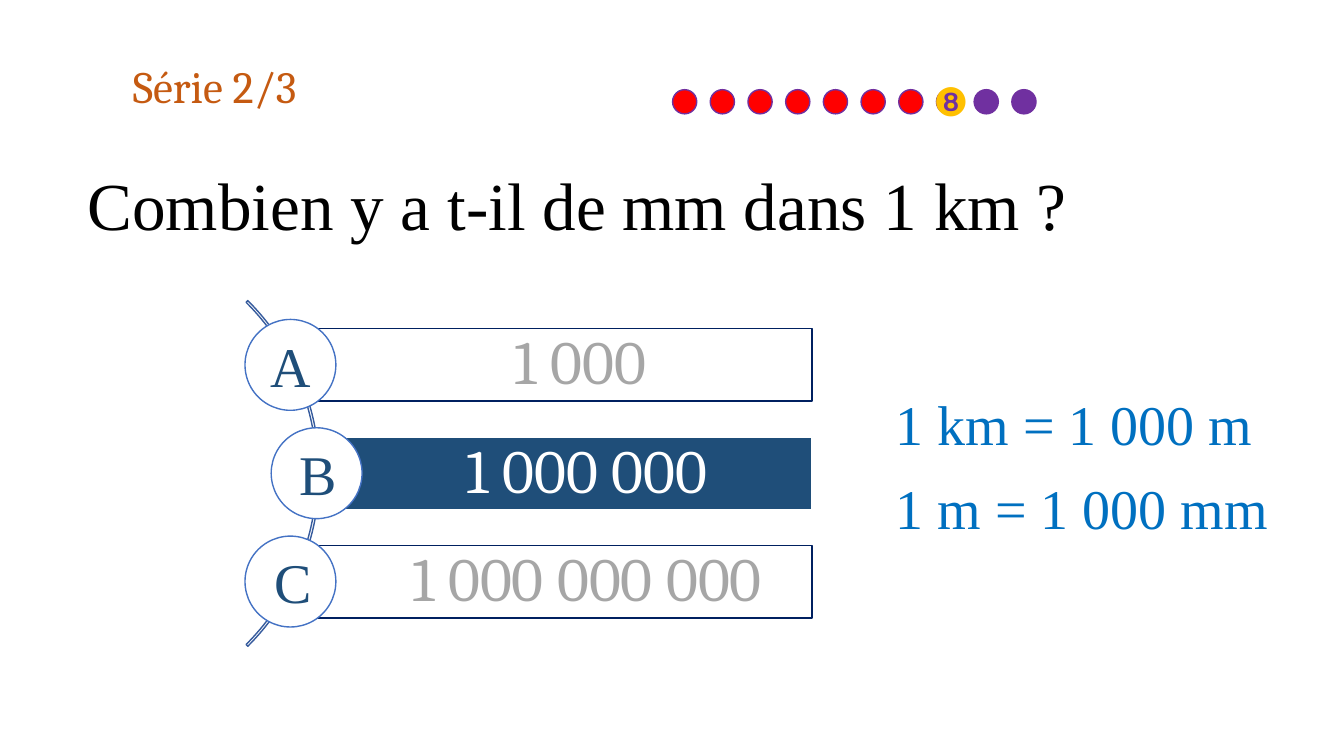
from pptx import Presentation
from pptx.dml.color import RGBColor
from pptx.enum.shapes import MSO_SHAPE
from pptx.enum.text import MSO_ANCHOR, PP_ALIGN
from pptx.util import Cm, Pt

OVAL, RECTANGLE, BLOCK_ARC = MSO_SHAPE.OVAL, MSO_SHAPE.RECTANGLE, MSO_SHAPE.BLOCK_ARC
MIDDLE, CENTER = MSO_ANCHOR.MIDDLE, PP_ALIGN.CENTER

WHITE = RGBColor(0xFF, 0xFF, 0xFF)
BLACK = RGBColor(0x00, 0x00, 0x00)
ORANGE = RGBColor(0xC5, 0x5A, 0x11)
RED = RGBColor(0xFF, 0x00, 0x00)
PURPLE = RGBColor(0x70, 0x30, 0xA0)
AMBER = RGBColor(0xFF, 0xC0, 0x00)
GREY = RGBColor(0xA6, 0xA6, 0xA6)
NAVY = RGBColor(0x00, 0x20, 0x60)
DARK_BLUE = RGBColor(0x1F, 0x4E, 0x79)
ARC_BLUE = RGBColor(0x36, 0x5B, 0x9D)
RING_BLUE = RGBColor(0x44, 0x72, 0xC4)
BRIGHT_BLUE = RGBColor(0x00, 0x70, 0xC0)

SERIF, CAMBRIA, SANS = "Times New Roman", "Cambria", "Arial"

BAR_TOP, BAR_STEP, BAR_HEIGHT, BAR_RIGHT = 8.28, 2.73, 1.83, 20.47
RING_SIZE = 2.29
DOT_LEFT, DOT_STEP, DOT_TOP, DOT_SIZE = 16.95, 0.95, 2.26, 0.61
DOT_COUNT, DONE_COUNT = 10, 7

ANSWERS = [
    {"letter": "A", "text": "1 000", "left": 7.32, "letter_left": 6.58,
     "inset": 1.78, "fill": None, "line": NAVY, "color": GREY},
    {"letter": "B", "text": "1 000 000", "left": 7.98, "letter_left": 7.29,
     "inset": 1.45, "fill": DARK_BLUE, "line": WHITE, "color": WHITE},
    {"letter": "C", "text": "1 000 000 000", "left": 7.32, "letter_left": 6.68,
     "inset": 2.11, "fill": None, "line": NAVY, "color": GREY},
]


def set_attributes(target, values):
    """Set every attribute named in a dict of format values."""
    for name, value in values.items():
        setattr(target, name, value)


def write_lines(text_frame, lines, font, size, color, paragraph_format=None):
    """Write one formatted paragraph for each line."""
    text_frame.word_wrap = True
    for index, line in enumerate(lines):
        paragraph = text_frame.add_paragraph() if index else text_frame.paragraphs[0]
        set_attributes(paragraph, paragraph_format or {})
        run = paragraph.add_run()
        run.text = line
        set_attributes(run.font, {"name": font, "size": Pt(size)})
        run.font.color.rgb = color


def add_text(slide, box, lines, font, size, color, paragraph_format=None):
    """Add a text box at left, top, width and height in centimetres."""
    text_box = slide.shapes.add_textbox(*map(Cm, box))
    write_lines(text_box.text_frame, lines, font, size, color, paragraph_format)


def add_outlined(slide, kind, box, fill, line):
    """Add a preset shape with a one-point outline and an optional fill."""
    shape = slide.shapes.add_shape(kind, *map(Cm, box))
    shape.shadow.inherit = False
    if fill is None:
        shape.fill.background()
    else:
        shape.fill.solid()
        shape.fill.fore_color.rgb = fill
    shape.line.color.rgb = line
    shape.line.width = Pt(1)
    return shape


def add_arc(slide):
    """Add the thin arc that runs behind the answer rings."""
    arc = add_outlined(slide, BLOCK_ARC, (-4.27, 5.77, 12.32, 12.32), None, ARC_BLUE)
    for index, value in enumerate((189, 27, 0.005)):
        arc.adjustments[index] = value


def add_answer(slide, answer, top):
    """Add one answer bar with its lettered ring."""
    left = answer["left"]
    bar = add_outlined(slide, RECTANGLE, (left, top, BAR_RIGHT - left, BAR_HEIGHT),
                       answer["fill"], answer["line"])
    set_attributes(bar.text_frame, {
        "vertical_anchor": MIDDLE, "margin_left": Cm(answer["inset"]),
        "margin_right": Cm(0.3), "margin_top": Cm(0.3), "margin_bottom": Cm(0.3)})
    write_lines(bar.text_frame, [answer["text"]], CAMBRIA, 44, answer["color"],
                {"alignment": CENTER, "line_spacing": 0.9})
    ring_top = top + (BAR_HEIGHT - RING_SIZE) / 2
    add_outlined(slide, OVAL, (left - RING_SIZE / 2, ring_top, RING_SIZE, RING_SIZE),
                 WHITE, RING_BLUE)
    add_text(slide, (answer["letter_left"], top - 0.06, 1.05, 1.96),
             [answer["letter"]], SERIF, 40, DARK_BLUE)


def add_progress(slide):
    """Add the row of progress dots and the current question number."""
    for index in range(DOT_COUNT):
        add_outlined(slide, OVAL,
                     (DOT_LEFT + index * DOT_STEP, DOT_TOP, DOT_SIZE, DOT_SIZE),
                     RED if index < DONE_COUNT else PURPLE, PURPLE)
    add_text(slide, (23.27, 1.83, 1.32, 1.45), ["❽"], SANS, 28, AMBER)


def main():
    """Build the quiz slide and save it."""
    presentation = Presentation()
    set_attributes(presentation, {"slide_width": Cm(33.87), "slide_height": Cm(19.05)})
    slide = presentation.slides.add_slide(presentation.slide_layouts[6])
    add_text(slide, (3.1, 1.5, 5.31, 1.37), ["Série 2/3"], CAMBRIA, 32, ORANGE,
             {"line_spacing": 0.9})
    add_text(slide, (1.96, 3.99, 31.19, 2.31), ["Combien y a t-il de mm dans 1 km ?"],
             SERIF, 48, BLACK)
    add_arc(slide)
    for index, answer in enumerate(ANSWERS):
        add_answer(slide, answer, BAR_TOP + index * BAR_STEP)
    add_progress(slide)
    add_text(slide, (22.33, 9.68, 10.34, 4.11), ["1 km = 1 000 m", "1 m = 1 000 mm"],
             SERIF, 40, BRIGHT_BLUE, {"space_after": Pt(12)})
    presentation.save("out.pptx")


if __name__ == "__main__":
    main()
